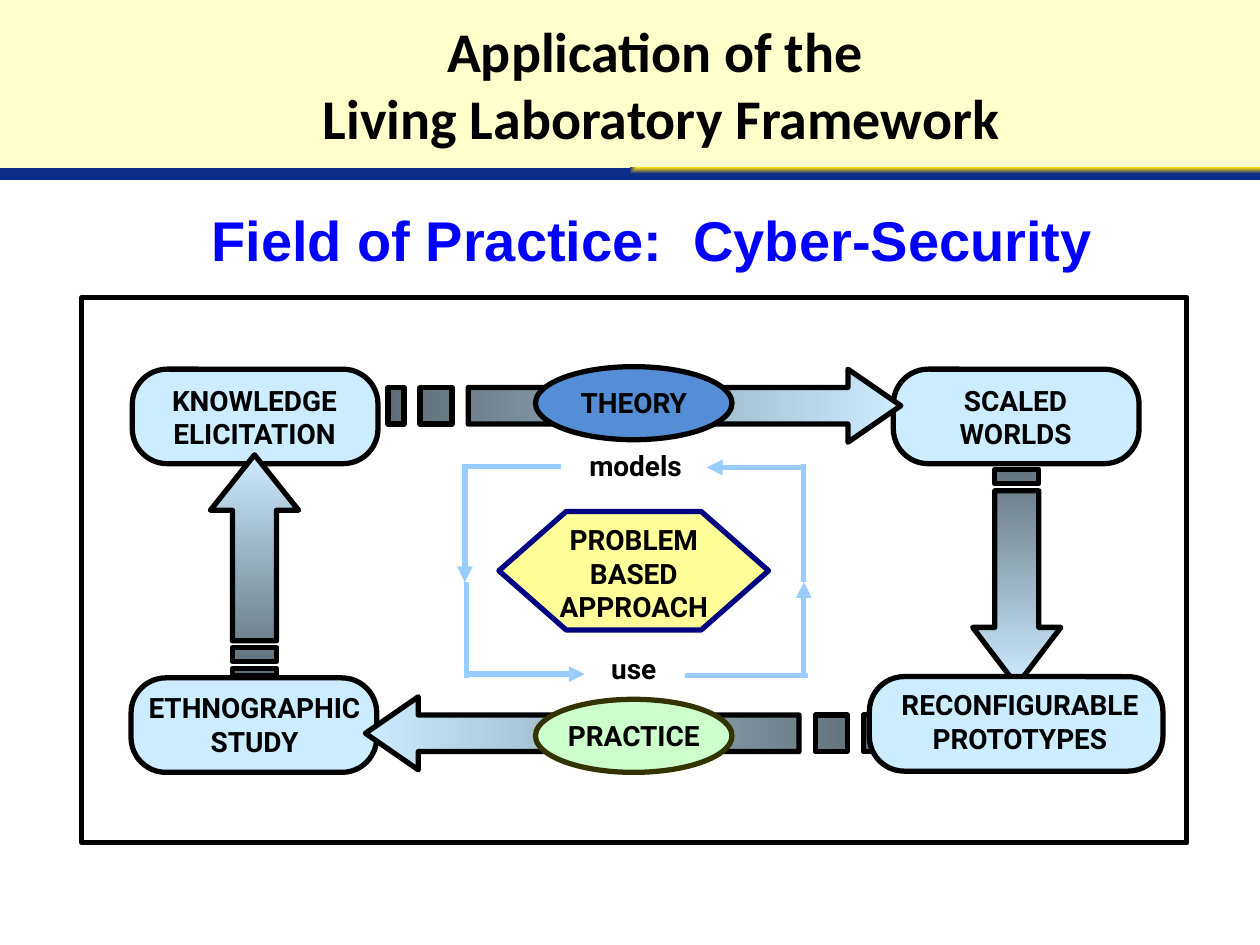
from typing import NamedTuple, Optional

import pptx
import pptx.dml.color
import pptx.enum.shapes
import pptx.enum.text
import pptx.oxml
import pptx.oxml.ns
import pptx.util
from pptx.dml.color import RGBColor
from pptx.util import Inches

BLACK = RGBColor(0x00, 0x00, 0x00)
CREAM = RGBColor(0xFF, 0xFF, 0xCC)
GOLD = RGBColor(0xFE, 0xD9, 0x10)
ROYAL = RGBColor(0x0D, 0x2B, 0x88)
SLATE = RGBColor(0x5E, 0x6D, 0x76)
ICE = RGBColor(0xCC, 0xEC, 0xFF)
SKY = RGBColor(0x99, 0xCC, 0xFF)
YELLOW = RGBColor(0xFF, 0xFF, 0x99)
NAVY = RGBColor(0x00, 0x00, 0x80)
STEEL = RGBColor(0x55, 0x8E, 0xD5)
MINT = RGBColor(0xCC, 0xFF, 0xCC)
OLIVE = RGBColor(0x33, 0x33, 0x00)
BLUE = RGBColor(0x00, 0x00, 0xFF)

KIND = pptx.enum.shapes.MSO_SHAPE
ALIGN = pptx.enum.text.PP_ALIGN
STROKE = pptx.util.Pt(3)


class Area(NamedTuple):
    left: float
    top: float
    width: float
    height: float


class Node(NamedTuple):
    kind: KIND
    area: Area
    fill: Optional[RGBColor]
    line: Optional[RGBColor] = BLACK
    adjust: Optional[float] = None


class Label(NamedTuple):
    text: str
    area: Area
    inset: float = 0.02
    size: int = 16
    font: str = "Roboto"
    color: RGBColor = BLACK
    align: ALIGN = ALIGN.CENTER
    wrap: bool = True


class Arrow(NamedTuple):
    """Striped arrow from its tail, along (dx, dy), with its head's size."""
    x: float
    y: float
    dx: int
    dy: int
    length: float
    head: float
    half: float
    angle: int


class Link(NamedTuple):
    start: tuple[float, float]
    end: tuple[float, float]
    tip: bool = False  # arrowhead at the start


def corner(left: float, top: float, width: float = 1.95) -> Node:
    return Node(KIND.ROUNDED_RECTANGLE, Area(left, top, width, 0.75), ICE, adjust=0.369)


def oval(top: float, fill: RGBColor, line: RGBColor) -> Node:
    return Node(KIND.OVAL, Area(4.25, top, 1.56, 0.58), fill, line)


FRAME = Node(KIND.RECTANGLE, Area(0.65, 2.36, 8.77, 4.33), None)
CORNERS = [corner(1.05, 2.93), corner(1.04, 5.38), corner(7.09, 2.93)]
LAST = corner(6.9, 5.37, 2.33)
CENTER = [
    Node(KIND.HEXAGON, Area(3.96, 4.06, 2.14, 0.94), YELLOW, NAVY, 0.568),
    oval(2.91, STEEL, BLACK),
    oval(5.55, MINT, OLIVE),
]

DOWN = Arrow(8.07, 3.61, 0, 1, 1.83, 0.46, 0.35, 270)
ARROWS = [
    Arrow(2.02, 5.36, 0, -1, 1.75, 0.44, 0.35, 90),
    Arrow(3.08, 3.22, 1, 0, 4.07, 0.42, 0.29, 0),
    Arrow(6.98, 5.82, -1, 0, 4.08, 0.42, 0.29, 180),
]

LINKS = [
    Link((5.61, 3.71), (6.39, 3.71), True),
    Link((6.38, 3.68), (6.38, 4.62)),
    Link((6.38, 4.62), (6.38, 5.38), True),
    Link((6.41, 5.36), (5.44, 5.36)),
    Link((4.64, 5.35), (3.69, 5.35), True),
    Link((3.7, 5.38), (3.7, 4.62)),
    Link((3.69, 4.62), (3.69, 3.68), True),
    Link((3.67, 3.7), (4.45, 3.7)),
]

LABELS = [
    Label("KNOWLEDGE\nELICITATION", Area(0.96, 3.02, 2.12, 0.58)),
    Label("ETHNOGRAPHIC\nSTUDY", Area(0.96, 5.46, 2.12, 0.58)),
    Label("SCALED\nWORLDS", Area(7, 3.02, 2.12, 0.58)),
    Label("RECONFIGURABLE\nPROTOTYPES", Area(6.9, 5.44, 2.39, 0.58)),
    Label("PROBLEM\nBASED\nAPPROACH", Area(3.97, 4.15, 2.12, 0.76), 0),
    Label("THEORY", Area(3.97, 3.01, 2.12, 0.38), 0.05),
    Label("PRACTICE", Area(3.97, 5.65, 2.12, 0.38), 0.05),
    Label("use", Area(4.64, 5.17, 0.78, 0.38), 0),
    Label("models", Area(4.46, 3.51, 1.17, 0.38), 0.05),
    Label("Application of the \nLiving Laboratory Framework",
          Area(2, 0.08, 6.5, 1.18), 0.05, 32, "Calibri"),
    Label("Field of Practice:  Cyber-Security", Area(1.58, 1.58, 7.26, 0.64),
          0.05, 32, "Arial", BLUE, ALIGN.LEFT, False),
]


def shade(fill, first: RGBColor, last: RGBColor, angle: int = 0) -> None:
    fill.gradient()
    fill.gradient_angle = angle
    for stop, color in zip(fill.gradient_stops, (first, last)):
        stop.color.rgb = color


def add_node(shapes, node: Node):
    shape = shapes.add_shape(node.kind, *map(Inches, node.area))
    shape.shadow.inherit = False
    if node.adjust is not None:
        shape.adjustments[0] = node.adjust
    if node.fill is None:
        shape.fill.background()
    else:
        shape.fill.solid()
        shape.fill.fore_color.rgb = node.fill
    if node.line is None:
        shape.line.fill.background()
    else:
        shape.line.color.rgb = node.line
        shape.line.width = STROKE
    return shape


def add_band(shapes) -> None:
    """Draw the blue rule whose gold glow starts at its top right."""
    band = add_node(shapes, Node(KIND.RECTANGLE, Area(0, 1.33, 10, 0.1), ROYAL, None))
    shade(band.fill, GOLD, ROYAL)
    lin = band.element.spPr.find(".//" + pptx.oxml.ns.qn("a:lin"))
    glow = pptx.oxml.parse_xml(
        f'<a:path {pptx.oxml.ns.nsdecls("a")} path="rect">'
        '<a:fillToRect l="100000" b="100000"/></a:path>')
    lin.getparent().replace(lin, glow)


def add_arrow(shapes, arrow: Arrow) -> None:
    unit, slim = arrow.length / 32, arrow.half / 2
    neck = arrow.length - arrow.head

    def place(along: float, side: float) -> tuple[int, int]:
        return (Inches(arrow.x + along * arrow.dx - side * arrow.dy),
                Inches(arrow.y + along * arrow.dy + side * arrow.dx))

    def stripe(start: float, end: float) -> list[tuple[float, float]]:
        return [(start, -slim), (end, -slim), (end, slim), (start, slim)]

    body = [(neck, -arrow.half), (neck, -slim), (5 * unit, -slim), (5 * unit, slim),
            (neck, slim), (neck, arrow.half), (arrow.length, 0)]
    rings = [[place(*spot) for spot in ring]
             for ring in (body, stripe(2 * unit, 4 * unit), stripe(0, unit))]
    pen = shapes.build_freeform(*rings[0][0])
    for ring in rings:
        if ring is not rings[0]:
            pen.move_to(*ring[0])
        pen.add_line_segments(ring[1:], close=True)
    shape = pen.convert_to_shape()
    shape.shadow.inherit = False
    shade(shape.fill, SLATE, ICE, arrow.angle)
    shape.line.color.rgb = BLACK
    shape.line.width = STROKE


def add_link(shapes, link: Link) -> None:
    line = shapes.add_connector(pptx.enum.shapes.MSO_CONNECTOR.STRAIGHT,
                                *map(Inches, link.start + link.end))
    line.line.color.rgb = SKY
    line.line.width = STROKE
    if link.tip:
        line.line._get_or_add_ln().append(pptx.oxml.parse_xml(
            f'<a:headEnd {pptx.oxml.ns.nsdecls("a")} type="triangle"/>'))
    line.element.spPr.append(pptx.oxml.parse_xml(
        f'<a:effectLst {pptx.oxml.ns.nsdecls("a")}/>'))


def add_label(shapes, label: Label) -> None:
    frame = shapes.add_textbox(*map(Inches, label.area)).text_frame
    frame.word_wrap = label.wrap
    frame.margin_top = Inches(label.inset)
    frame.margin_bottom = 0
    frame.text = label.text
    for para in frame.paragraphs:
        para.alignment = label.align
        for run in para.runs:
            run.font.name = label.font
            run.font.size = pptx.util.Pt(label.size)
            run.font.bold = True
            run.font.color.rgb = label.color


def main() -> None:
    deck = pptx.Presentation()
    deck.slide_width, deck.slide_height = Inches(10), Inches(7.5)
    shapes = deck.slides.add_slide(deck.slide_layouts[6]).shapes
    add_node(shapes, Node(KIND.RECTANGLE, Area(0, 0, 10, 1.35), CREAM, None))
    add_band(shapes)
    add_arrow(shapes, DOWN)
    for node in [FRAME, *CORNERS]:
        add_node(shapes, node)
    for arrow in ARROWS:
        add_arrow(shapes, arrow)
    for node in CENTER:
        add_node(shapes, node)
    for link in LINKS:
        add_link(shapes, link)
    add_node(shapes, LAST)
    for label in LABELS:
        add_label(shapes, label)
    deck.save("out.pptx")


if __name__ == "__main__":
    main()
